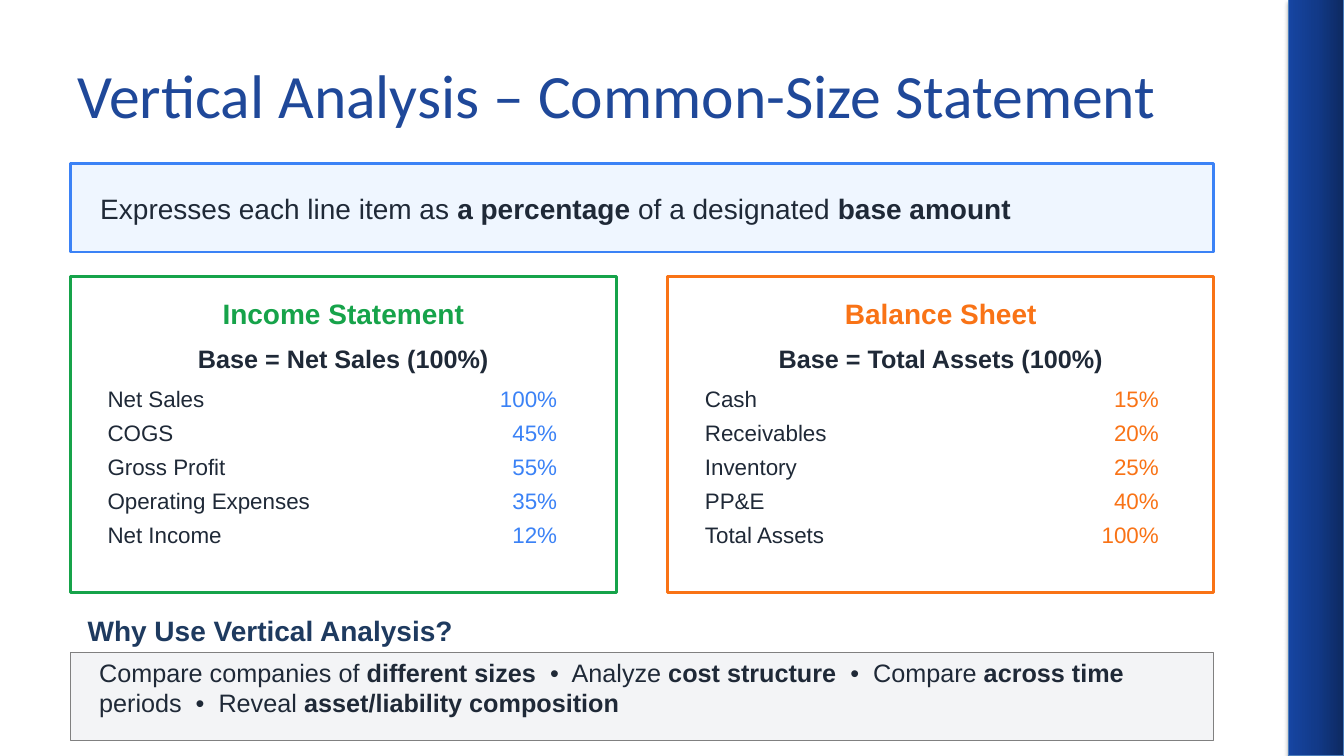
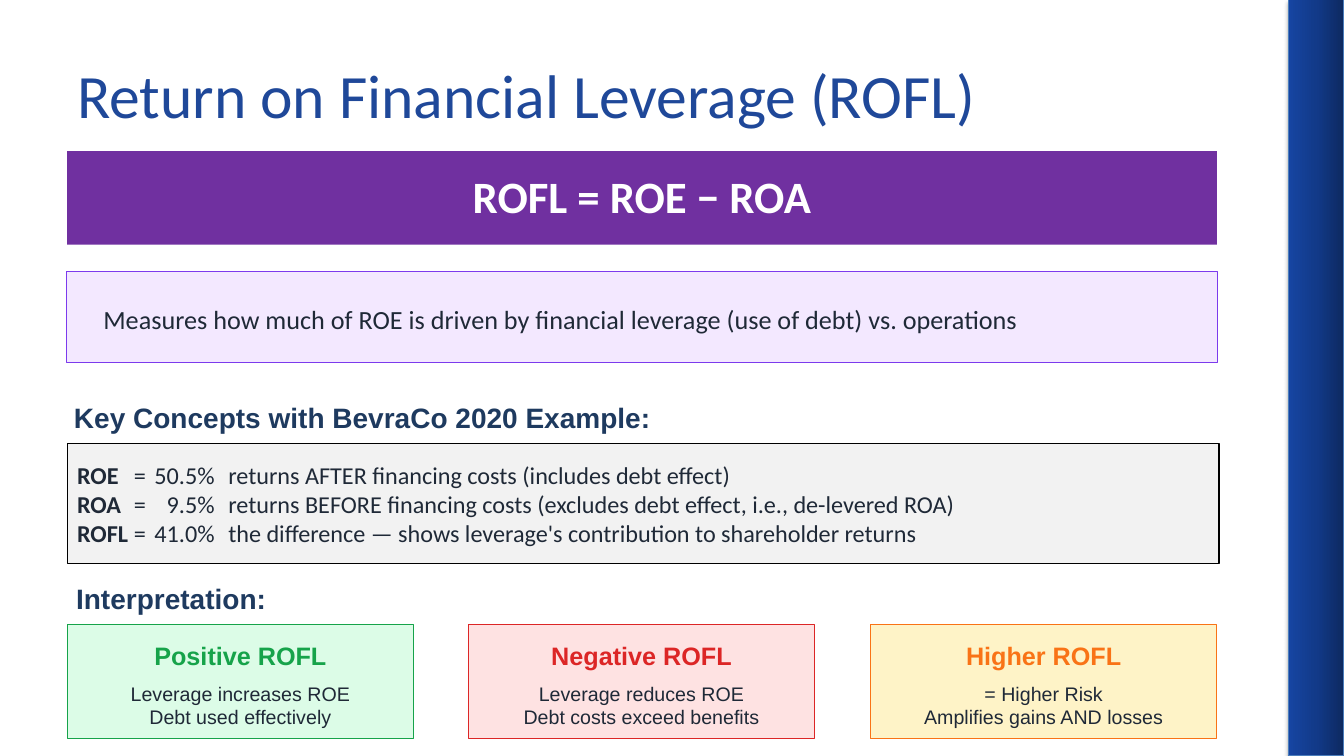
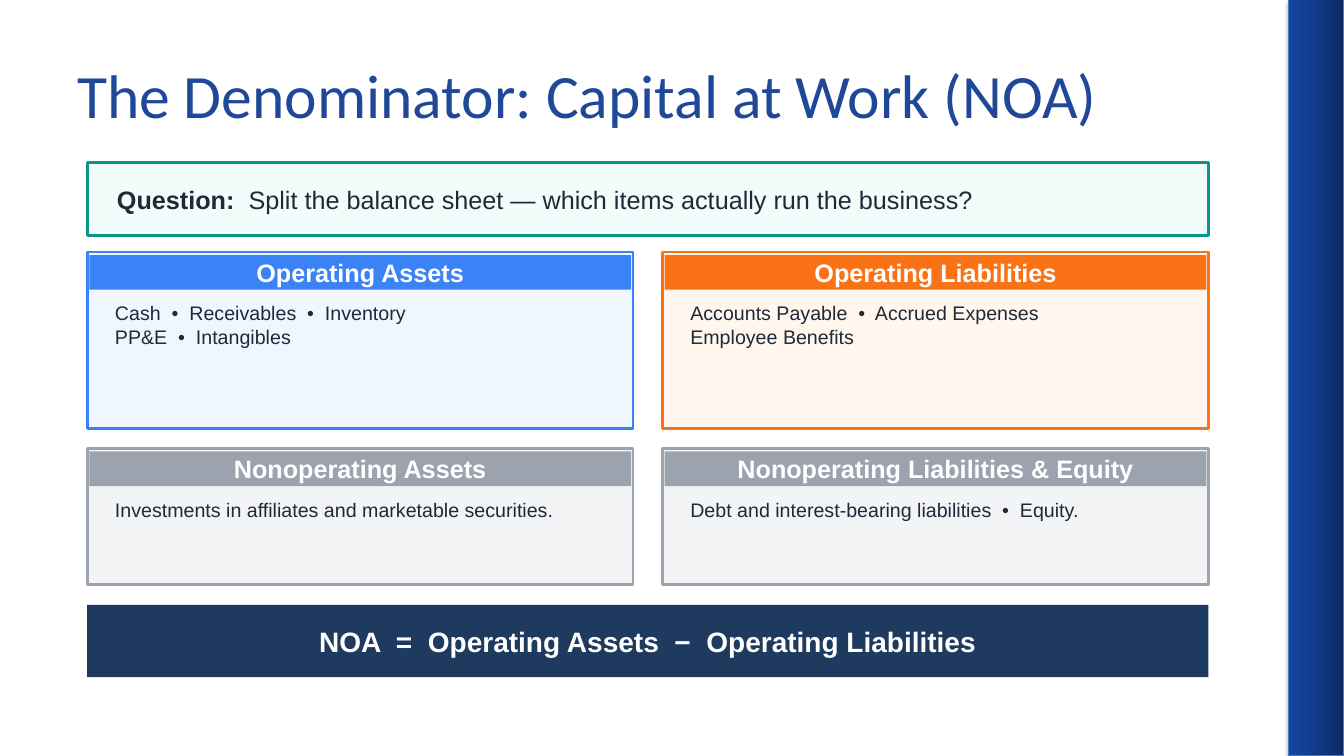
"""Build three slides on financial statement analysis."""
from copy import deepcopy
from dataclasses import dataclass, replace
from typing import NamedTuple, Optional

from lxml.etree import SubElement
from pptx import Presentation
from pptx.dml.color import RGBColor
from pptx.enum.shapes import MSO_SHAPE
from pptx.enum.text import MSO_ANCHOR, PP_ALIGN
from pptx.oxml.ns import qn
from pptx.presentation import Presentation as Deck
from pptx.shapes.autoshape import Shape
from pptx.slide import Slide
from pptx.text.text import TextFrame
from pptx.util import Emu, Pt

EMU_PER_PX = 9525
SLIDE_WIDTH, SLIDE_HEIGHT = 1280, 720

WHITE = "FFFFFF"
INK = "1F2937"
NAVY = "1E3A5F"
TITLE_BLUE = "1F4899"
BLUE = "3B82F6"
PALE_BLUE = "EFF6FF"
GREEN = "16A34A"
ORANGE = "F97316"
RED = "DC2626"
GRAY = "9CA3AF"
PALE_GRAY = "F3F4F6"
BAND_EDGE = "4B7EBC"
BAND_STOPS = ((0, "0D2960"), (0.5, "123A89"), (1, "1645A2"))


class Area(NamedTuple):
    """A rectangle in px."""
    left: int
    top: int
    width: int
    height: int


@dataclass(frozen=True)
class Style:
    """The look of one text."""
    size: float
    color: str = INK
    font: str = "Arial"
    bold: bool = False
    align: PP_ALIGN = PP_ALIGN.LEFT
    anchor: MSO_ANCHOR = MSO_ANCHOR.MIDDLE
    line_points: Optional[float] = None


@dataclass(frozen=True)
class Statement:
    """A panel of common-size percentages."""
    left: int
    value_left: int
    name: str
    base: str
    color: str
    value_color: str
    rows: tuple[tuple[str, str], ...]


@dataclass(frozen=True)
class Outcome:
    """A card that interprets a ROFL result."""
    name: str
    meaning: str
    color: str
    fill: str


@dataclass(frozen=True)
class Group:
    """A headed group of balance sheet items."""
    area: Area
    name: str
    items: str
    color: str
    fill: str


TITLE = Style(44, TITLE_BLUE, "Calibri")
HEADING = Style(20, NAVY, bold=True)
LABEL = Style(16)
CARD_NAME = Style(18, bold=True, align=PP_ALIGN.CENTER)
CARD_BODY = Style(14, align=PP_ALIGN.CENTER)
GROUP_BODY = Style(14, anchor=MSO_ANCHOR.TOP)
CONCEPT = Style(17.3, font="Calibri")
CONCEPT_TABS = ((54, "l"), (131, "r"), (144, "l"))

STATEMENTS = (
    Statement(67, 398, "Income Statement", "Base = Net Sales (100%)", GREEN, BLUE,
              (("Net Sales", "100%"), ("COGS", "45%"), ("Gross Profit", "55%"),
               ("Operating Expenses", "35%"), ("Net Income", "12%"))),
    Statement(636, 971, "Balance Sheet", "Base = Total Assets (100%)", ORANGE, ORANGE,
              (("Cash", "15%"), ("Receivables", "20%"), ("Inventory", "25%"),
               ("PP&E", "40%"), ("Total Assets", "100%"))),
)
OUTCOMES = (
    Outcome("Positive ROFL", "Leverage increases ROE\nDebt used effectively", GREEN, "DCFCE7"),
    Outcome("Negative ROFL", "Leverage reduces ROE\nDebt costs exceed benefits", RED, "FEE2E2"),
    Outcome("Higher ROFL", "= Higher Risk\nAmplifies gains AND losses", ORANGE, "FEF3C7"),
)
GROUPS = (
    Group(Area(83, 240, 520, 168), "Operating Assets",
          "Cash  •  Receivables  •  Inventory\nPP&E  •  Intangibles", BLUE, PALE_BLUE),
    Group(Area(631, 240, 520, 168), "Operating Liabilities",
          "Accounts Payable  •  Accrued Expenses\nEmployee Benefits", ORANGE, "FFF7ED"),
    Group(Area(83, 427, 520, 130), "Nonoperating Assets",
          "Investments in affiliates and marketable securities.", GRAY, PALE_GRAY),
    Group(Area(631, 427, 520, 130), "Nonoperating Liabilities & Equity",
          "Debt and interest-bearing liabilities  •  Equity.", GRAY, PALE_GRAY),
)


def px(length: int) -> Emu:
    """Turn px into EMU."""
    return Emu(length * EMU_PER_PX)


def rgb(color: str) -> RGBColor:
    """Turn a hex string into a colour."""
    return RGBColor.from_string(color)


def write(frame: TextFrame, text: str, style: Style, tabs: tuple[tuple[int, str], ...] = ()) -> None:
    """Write lines of text, with bold parts between asterisks."""
    frame.word_wrap = True
    frame.vertical_anchor = style.anchor
    frame.text = text
    for para, line in zip(frame.paragraphs, text.split("\n")):
        para.alignment = style.align
        if style.line_points:
            para.line_spacing = Pt(style.line_points)
        if tabs:
            tab_list = SubElement(para._p.get_or_add_pPr(), qn("a:tabLst"))
            for position, align in tabs:
                SubElement(tab_list, qn("a:tab"), pos=str(px(position)), algn=align)
        para.clear()
        for index, part in enumerate(line.split("*")):
            if not part:
                continue
            span = para.add_run()
            span.text = part
            span.font.name = style.font
            span.font.size = Pt(style.size)
            span.font.bold = style.bold or index % 2 == 1
            span.font.color.rgb = rgb(style.color)


def add_text(page: Slide, area: Area, text: str, style: Style) -> None:
    """Add a text box."""
    box = page.shapes.add_textbox(*map(px, area))
    write(box.text_frame, text, style)


def add_box(page: Slide, area: Area, fill: str, line: Optional[str] = None, weight: float = 0.75) -> Shape:
    """Add a flat rectangle."""
    box = page.shapes.add_shape(MSO_SHAPE.RECTANGLE, *map(px, area))
    box.shadow.inherit = False
    box.fill.solid()
    box.fill.fore_color.rgb = rgb(fill)
    if line:
        box.line.color.rgb = rgb(line)
        box.line.width = Pt(weight)
    else:
        box.line.fill.background()
    return box


def add_band(page: Slide) -> None:
    """Add the gradient band at the right edge."""
    band = add_box(page, Area(1227, 0, 53, SLIDE_HEIGHT), TITLE_BLUE, BAND_EDGE)
    band.fill.gradient()
    band.fill.gradient_angle = 180
    properties = band._element.spPr
    stop_list = properties.find(".//" + qn("a:gsLst"))
    stop_list.insert(1, deepcopy(stop_list[0]))
    for stop, (position, color) in zip(band.fill.gradient_stops, BAND_STOPS):
        stop.position = position
        stop.color.rgb = rgb(color)
    shadow = SubElement(properties.find(qn("a:effectLst")), qn("a:outerShdw"), blurRad=str(Pt(3.1)),
                        dist=str(Pt(1.8)), dir="5400000", rotWithShape="0")
    shade = SubElement(shadow, qn("a:srgbClr"), val="000000")
    SubElement(shade, qn("a:alpha"), val="35000")


def add_page(deck: Deck, title: str) -> Slide:
    """Add a slide with the shared band and title."""
    page = deck.slides.add_slide(deck.slide_layouts[6])
    add_band(page)
    add_text(page, Area(64, 29, 1163, 120), title, TITLE)
    return page


def add_statement(page: Slide, statement: Statement) -> None:
    """Draw one statement panel."""
    left = statement.left
    add_box(page, Area(left, 263, 520, 301), WHITE, statement.color, 2)
    add_text(page, Area(left, 268, 520, 61), statement.name,
             replace(CARD_NAME, size=20, color=statement.color))
    add_text(page, Area(left, 317, 520, 48), statement.base, CARD_NAME)
    value_style = replace(LABEL, color=statement.value_color, align=PP_ALIGN.RIGHT)
    for index, (label, value) in enumerate(statement.rows):
        top = 361 + index * 65 // 2
        add_text(page, Area(left + 26, top, 296, 37), label, LABEL)
        add_text(page, Area(statement.value_left, top, 142, 37), value, value_style)


def add_outcome(page: Slide, left: int, outcome: Outcome) -> None:
    """Draw one interpretation card."""
    add_box(page, Area(left, 595, 330, 108), outcome.fill, outcome.color)
    add_text(page, Area(left, 602, 330, 45), outcome.name, replace(CARD_NAME, color=outcome.color))
    add_text(page, Area(left, 646, 330, 51), outcome.meaning, CARD_BODY)


def add_group(page: Slide, group: Group) -> None:
    """Draw one headed group of items."""
    left, top, width, height = group.area
    header = Area(left + 2, top + 3, width - 4, 33)
    add_box(page, group.area, group.fill, group.color, 2)
    add_box(page, header, group.color)
    add_text(page, header, group.name, replace(CARD_NAME, color=WHITE))
    add_text(page, Area(left + 17, top + 42, width - 33, height - 50), group.items, GROUP_BODY)


def build_vertical_analysis(deck: Deck) -> None:
    """Build the common-size statement slide."""
    page = add_page(deck, "Vertical Analysis – Common-Size Statement")
    add_box(page, Area(67, 156, 1089, 84), PALE_BLUE, BLUE, 2)
    add_text(page, Area(86, 174, 1033, 48),
             "Expresses each line item as *a percentage *of a designated *base amount*", Style(20))
    for statement in STATEMENTS:
        add_statement(page, statement)
    add_text(page, Area(74, 583, 1013, 34), "Why Use Vertical Analysis?", HEADING)
    add_box(page, Area(67, 621, 1089, 84), PALE_GRAY, "808080")
    add_text(page, Area(85, 621, 1028, 68),
             "Compare companies of *different sizes  *•  Analyze *cost structure  *•  Compare "
             "*across time *periods  •  Reveal *asset/liability composition*",
             Style(18, line_points=21.6))


def build_financial_leverage(deck: Deck) -> None:
    """Build the return on financial leverage slide."""
    page = add_page(deck, "Return on Financial Leverage (ROFL)")
    add_box(page, Area(64, 144, 1095, 89), "7030A0")
    add_text(page, Area(64, 154, 1095, 64), "ROFL = ROE − ROA",
             Style(32, WHITE, "Calibri", True, PP_ALIGN.CENTER))
    add_box(page, Area(63, 259, 1097, 86), "F3E8FF", "7C3AED")
    add_text(page, Area(89, 278, 1037, 51),
             "Measures how much of ROE is driven by financial leverage (use of debt) vs. operations",
             Style(18.7, font="Calibri"))
    add_text(page, Area(61, 372, 1097, 51), "Key Concepts with BevraCo 2020 Example:", HEADING)
    concepts = add_box(page, Area(64, 422, 1097, 115), "F2F2F2", "000000")
    write(concepts.text_frame,
          "*ROE*\t=\t50.5%\treturns AFTER financing costs (includes debt effect)\n"
          "*ROA*\t=\t9.5%\treturns BEFORE financing costs (excludes debt effect, i.e., de-levered ROA)\n"
          "*ROFL*\t=\t41.0%\tthe difference — shows leverage's contribution to shareholder returns",
          CONCEPT, CONCEPT_TABS)
    add_text(page, Area(63, 547, 1018, 45), "Interpretation:", HEADING)
    for index, outcome in enumerate(OUTCOMES):
        add_outcome(page, 64 + index * 765 // 2, outcome)


def build_capital_at_work(deck: Deck) -> None:
    """Build the net operating assets slide."""
    page = add_page(deck, "The Denominator: Capital at Work (NOA)")
    add_box(page, Area(83, 155, 1068, 69), "F0FDFA", "0D9488", 2)
    add_text(page, Area(102, 155, 1030, 69),
             "*Question:  *Split the balance sheet — which items actually run the business?", Style(18))
    for group in GROUPS:
        add_group(page, group)
    add_box(page, Area(83, 576, 1068, 69), NAVY)
    add_text(page, Area(102, 576, 1030, 69), "NOA  =  Operating Assets  −  Operating Liabilities",
             replace(HEADING, color=WHITE, align=PP_ALIGN.CENTER))


def main() -> None:
    """Build and save the deck."""
    deck = Presentation()
    deck.slide_width, deck.slide_height = px(SLIDE_WIDTH), px(SLIDE_HEIGHT)
    build_vertical_analysis(deck)
    build_financial_leverage(deck)
    build_capital_at_work(deck)
    deck.save("out.pptx")


if __name__ == "__main__":
    main()
